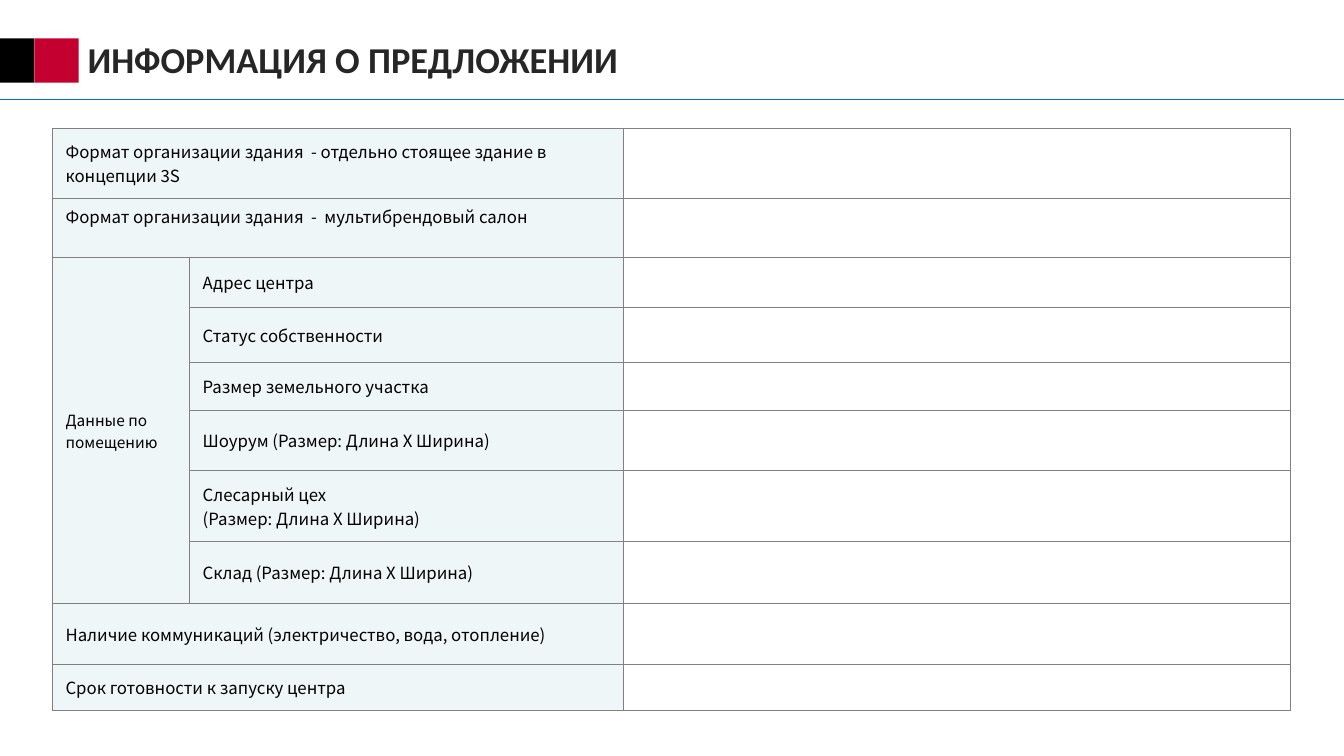
from lxml import etree
from pptx import Presentation
from pptx.dml.color import RGBColor
from pptx.enum.shapes import MSO_CONNECTOR, MSO_SHAPE
from pptx.enum.text import MSO_ANCHOR
from pptx.oxml.ns import qn
from pptx.util import Inches, Pt

TITLE = "ИНФОРМАЦИЯ О ПРЕДЛОЖЕНИИ"
WIDE_LABELS = {
    0: "Формат организации здания  - отдельно стоящее здание в концепции 3S",
    1: "Формат организации здания  -  мультибрендовый салон",
    8: "Наличие коммуникаций (электричество, вода, отопление)",
    9: "Срок готовности к запуску центра",
}
PREMISES = "Данные по помещению"
PREMISES_FIRST_ROW = 2
PREMISES_LABELS = [
    "Адрес центра",
    "Статус собственности",
    "Размер земельного участка",
    "Шоурум (Размер: Длина Х Ширина)",
    "Слесарный цех\v(Размер: Длина Х Ширина)",
    "Склад (Размер: Длина Х Ширина)",
]
COLUMN_WIDTHS = [1.36, 4.3, 6.62]
ROW_HEIGHTS = [0.7, 0.58, 0.5, 0.55, 0.47, 0.6, 0.7, 0.62, 0.6, 0.46]

BLACK = RGBColor(0x00, 0x00, 0x00)
RED = RGBColor(0xC3, 0x00, 0x2F)
BLUE = RGBColor(0x00, 0x70, 0xC0)
TITLE_GREY = RGBColor(0x26, 0x26, 0x26)
BORDER_GREY = RGBColor(0x80, 0x80, 0x80)
LABEL_FILL = RGBColor(0xEF, 0xF6, 0xF7)

TITLE_FONT = "Calibri"
TABLE_FONT = "Noto Sans CJK SC"


def add_rule(slide):
    rule = slide.shapes.add_connector(
        MSO_CONNECTOR.STRAIGHT, 0, Inches(0.99), Inches(13.33), Inches(0.99))
    rule.line.color.rgb = BLUE
    rule.line.width = Pt(0.5)
    etree.SubElement(rule._element.spPr, qn("a:effectLst"))


def add_block(slide, left, width, color):
    block = slide.shapes.add_shape(
        MSO_SHAPE.RECTANGLE, Inches(left), Inches(0.38), Inches(width), Inches(0.44))
    block.shadow.inherit = False
    block.fill.solid()
    block.fill.fore_color.rgb = color
    block.line.fill.background()


def add_title(slide):
    box = slide.shapes.add_textbox(Inches(0.77), Inches(0.3), Inches(12.18), Inches(0.62))
    frame = box.text_frame
    frame.word_wrap = True
    frame.vertical_anchor = MSO_ANCHOR.MIDDLE
    frame.text = TITLE
    heading = frame.paragraphs[0]
    heading.line_spacing = 0.9
    heading.font.name = TITLE_FONT
    heading.font.size = Pt(26)
    heading.font.bold = True
    heading.font.color.rgb = TITLE_GREY


def set_borders(cell):
    properties = cell._tc.get_or_add_tcPr()
    for side in ("lnL", "lnR", "lnT", "lnB"):
        border = etree.SubElement(properties, qn(f"a:{side}"), w=str(Pt(0.75)))
        fill = etree.SubElement(border, qn("a:solidFill"))
        etree.SubElement(fill, qn("a:srgbClr"), val=str(BORDER_GREY))


def set_label(cell, label, size=12, anchor=MSO_ANCHOR.MIDDLE):
    cell.text = label
    cell.vertical_anchor = anchor
    cell.margin_left = cell.margin_right = Inches(0.13)
    cell.margin_top = cell.margin_bottom = Inches(0.05)
    font = cell.text_frame.paragraphs[0].font
    font.name = TABLE_FONT
    font.size = Pt(size)
    font.bold = False
    font.color.rgb = BLACK


def add_offer_table(slide):
    table = slide.shapes.add_table(
        len(ROW_HEIGHTS), len(COLUMN_WIDTHS), Inches(0.52), Inches(1.27),
        Inches(sum(COLUMN_WIDTHS)), Inches(sum(ROW_HEIGHTS))).table
    table.first_row = table.horz_banding = False
    for column, width in zip(table.columns, COLUMN_WIDTHS):
        column.width = Inches(width)
    for row, height in zip(table.rows, ROW_HEIGHTS):
        row.height = Inches(height)
        for index, cell in enumerate(row.cells):
            set_borders(cell)
            if index < 2:
                cell.fill.solid()
                cell.fill.fore_color.rgb = LABEL_FILL
            else:
                cell.fill.background()

    for row, label in WIDE_LABELS.items():
        table.cell(row, 0).merge(table.cell(row, 1))
        anchor = MSO_ANCHOR.TOP if row == 1 else MSO_ANCHOR.MIDDLE
        set_label(table.cell(row, 0), label, anchor=anchor)

    premises = table.cell(PREMISES_FIRST_ROW, 0)
    premises.merge(table.cell(PREMISES_FIRST_ROW + len(PREMISES_LABELS) - 1, 0))
    set_label(premises, PREMISES, size=11)
    for row, label in enumerate(PREMISES_LABELS, PREMISES_FIRST_ROW):
        set_label(table.cell(row, 1), label)


def main():
    deck = Presentation()
    deck.slide_width, deck.slide_height = Inches(13.33), Inches(7.5)
    slide = deck.slides.add_slide(deck.slide_layouts[6])
    add_rule(slide)
    add_block(slide, 0, 0.34, BLACK)
    add_block(slide, 0.34, 0.44, RED)
    add_title(slide)
    add_offer_table(slide)
    deck.save("out.pptx")


if __name__ == "__main__":
    main()
